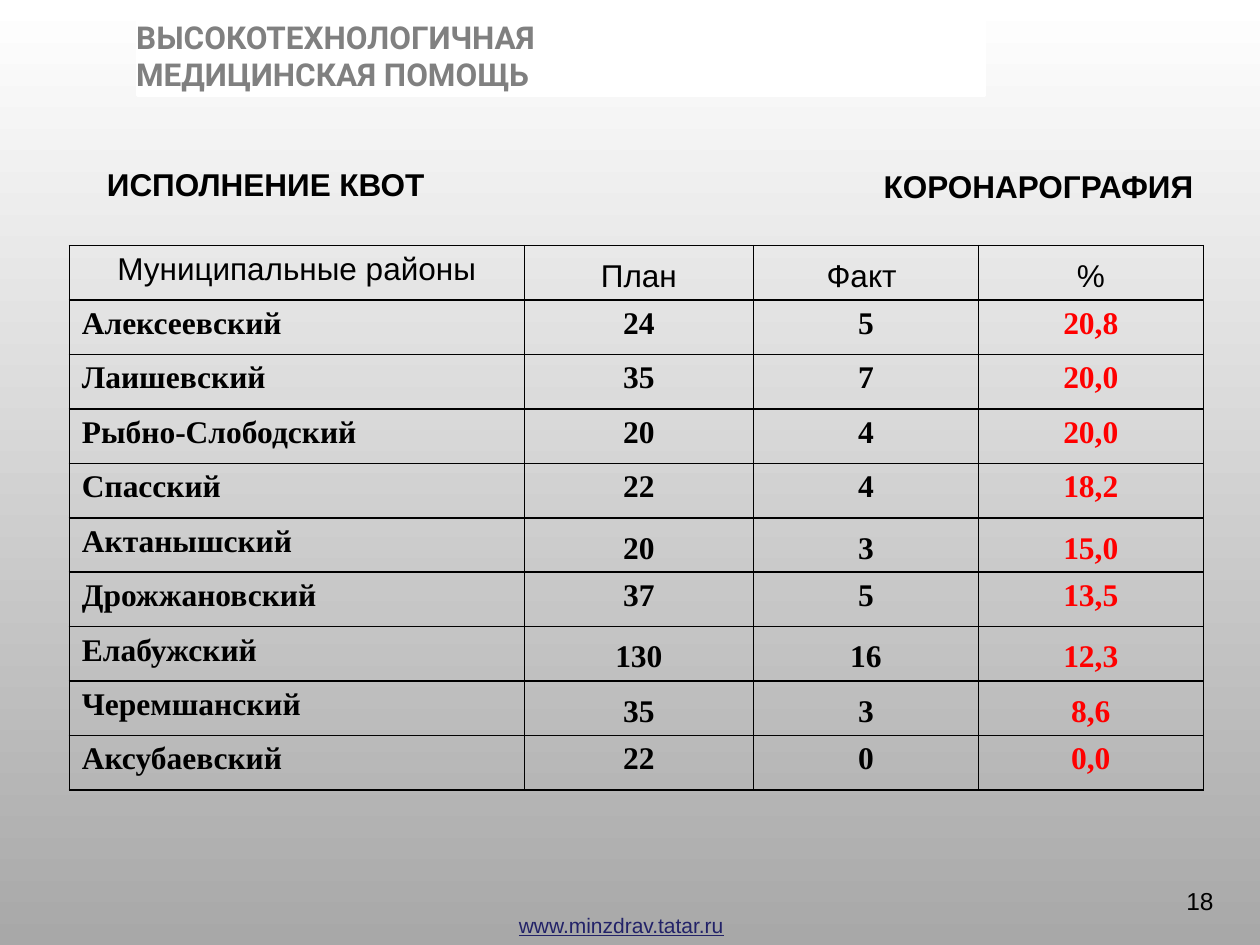
"""Build the slide on fulfilment of coronary angiography quotas."""
import pptx
import pptx.dml.color
import pptx.enum.shapes
import pptx.enum.text
import pptx.oxml
import pptx.oxml.ns
import pptx.util
from lxml import etree

Pt = pptx.util.Pt
RGBColor = pptx.dml.color.RGBColor
ALIGN = pptx.enum.text.PP_ALIGN
ANCHOR = pptx.enum.text.MSO_ANCHOR

BLACK = RGBColor(0, 0, 0)
WHITE = RGBColor(255, 255, 255)
RED = RGBColor(255, 0, 0)
GRAY = RGBColor(0x80, 0x80, 0x80)
SHADE = RGBColor(0xA8, 0xA8, 0xA8)
NAVY = RGBColor(0x22, 0x22, 0x68)

HEADER = ("Муниципальные районы", "План", "Факт ", "%")
DISTRICTS = (
    ("Алексеевский", "24", "5", "20,8"),
    ("Лаишевский", "35", "7", "20,0"),
    ("Рыбно-Слободский", "20", "4", "20,0"),
    ("Спасский", "22", "4", "18,2"),
    ("Актанышский", "20", "3", "15,0"),
    ("Дрожжановский", "37", "5", "13,5"),
    ("Елабужский", "130", "16", "12,3"),
    ("Черемшанский", "35", "3", "8,6"),
    ("Аксубаевский", "22", "0", "0,0"),
)
COLUMN_WIDTHS = (260, 131, 128.5, 128.5)
ROW_HEIGHT = 31.1
BOTTOM_ROWS = (0, 5, 7, 8)


def write_text(frame, text, *, size=18, font="Arial", color=BLACK, bold=False,
               underline=False, align=ALIGN.LEFT, hanging=0):
    para = frame.paragraphs[0]
    para.alignment = align
    if hanging:
        properties = para._p.get_or_add_pPr()
        properties.set("marL", str(Pt(hanging)))
        properties.set("indent", str(-Pt(hanging)))
    span = para.add_run()
    span.text = text
    span.font.size = Pt(size)
    span.font.name = font
    span.font.bold = bold
    span.font.underline = underline
    span.font.color.rgb = color


class SlideBuilder:
    def __init__(self, deck):
        self.page = deck.slides.add_slide(deck.slide_layouts[5])
        self.border_color = BLACK
        self.border_width = 1

    def background(self, top, bottom):
        fill = self.page.background.fill
        fill.gradient()
        fill.gradient_angle = 270
        for stop, color, position in zip(fill.gradient_stops, (top, bottom), (0, 1)):
            stop.color.rgb = color
            stop.position = position

    def panel(self, left, top, width, height, color):
        box = self.page.shapes.add_shape(
            pptx.enum.shapes.MSO_SHAPE.RECTANGLE, Pt(left), Pt(top), Pt(width), Pt(height))
        box.shadow.inherit = False
        box.fill.solid()
        box.fill.fore_color.rgb = color
        box.line.color.rgb = color
        box.line.width = Pt(2)

    def label(self, left, top, width, height, text, wrap=True, **style):
        box = self.page.shapes.add_textbox(Pt(left), Pt(top), Pt(width), Pt(height))
        box.text_frame.word_wrap = wrap
        write_text(box.text_frame, text, **style)

    def title(self, left, top, width, height, text, **style):
        box = self.page.shapes.title
        box.left, box.top, box.width, box.height = map(Pt, (left, top, width, height))
        frame = box.text_frame
        frame.word_wrap = True
        frame.auto_size = pptx.enum.text.MSO_AUTO_SIZE.NONE
        frame.vertical_anchor = ANCHOR.TOP
        write_text(frame, text, **style)
        self.page.shapes._spTree.append(box._element)

    def border(self, cell):
        properties = cell._tc.get_or_add_tcPr()
        for position, side in enumerate(("lnL", "lnR", "lnT", "lnB")):
            line = pptx.oxml.parse_xml(
                f'<a:{side} {pptx.oxml.ns.nsdecls("a")} w="{Pt(self.border_width)}"/>')
            fill = etree.SubElement(line, pptx.oxml.ns.qn("a:solidFill"))
            etree.SubElement(fill, pptx.oxml.ns.qn("a:srgbClr"), val=str(self.border_color))
            properties.insert(position, line)

    def table(self, left, top, header, records):
        rows = (header, *records)
        table = self.page.shapes.add_table(
            len(rows), len(header), Pt(left), Pt(top),
            Pt(sum(COLUMN_WIDTHS)), Pt(ROW_HEIGHT * len(rows))).table
        table.first_row = table.horz_banding = False
        for column, width in zip(table.columns, COLUMN_WIDTHS):
            column.width = Pt(width)
        for row_index, values in enumerate(rows):
            table.rows[row_index].height = Pt(ROW_HEIGHT)
            is_header = row_index == 0
            for column_index, text in enumerate(values):
                cell = table.cell(row_index, column_index)
                is_name = column_index == 0
                is_percent = column_index == len(values) - 1
                at_bottom = row_index in BOTTOM_ROWS and not is_name
                cell.vertical_anchor = ANCHOR.BOTTOM if at_bottom else ANCHOR.TOP
                cell.fill.background()
                self.border(cell)
                write_text(
                    cell.text_frame, text, hanging=27, bold=not is_header,
                    font="Arial" if is_header else "Times New Roman",
                    color=RED if is_percent and not is_header else BLACK,
                    align=ALIGN.LEFT if is_name and not is_header else ALIGN.CENTER)


def main():
    deck = pptx.Presentation()
    deck.slide_width, deck.slide_height = Pt(720), Pt(540)
    builder = SlideBuilder(deck)
    builder.background(WHITE, SHADE)
    builder.label(289.4, 517.7, 132.5, 21.6, "www.minzdrav.tatar.ru", wrap=False,
                  size=12, color=NAVY, underline=True)
    builder.panel(78.5, 11.5, 483.8, 43.2, WHITE)
    builder.table(39.6, 140.4, HEADER, DISTRICTS)
    builder.label(249.8, 91.8, 439.2, 28.8, "КОРОНАРОГРАФИЯ", bold=True, align=ALIGN.RIGHT)
    builder.label(54, 90.9, 198, 28.8, "ИСПОЛНЕНИЕ КВОТ", wrap=False, bold=True)
    builder.label(668.9, 502.8, 31.7, 37.2, "18", size=14, align=ALIGN.RIGHT)
    builder.title(70.6, 6.5, 360, 51.1, "ВЫСОКОТЕХНОЛОГИЧНАЯ МЕДИЦИНСКАЯ ПОМОЩЬ",
                  font="Roboto", color=GRAY, bold=True)
    deck.save("out.pptx")


if __name__ == "__main__":
    main()
